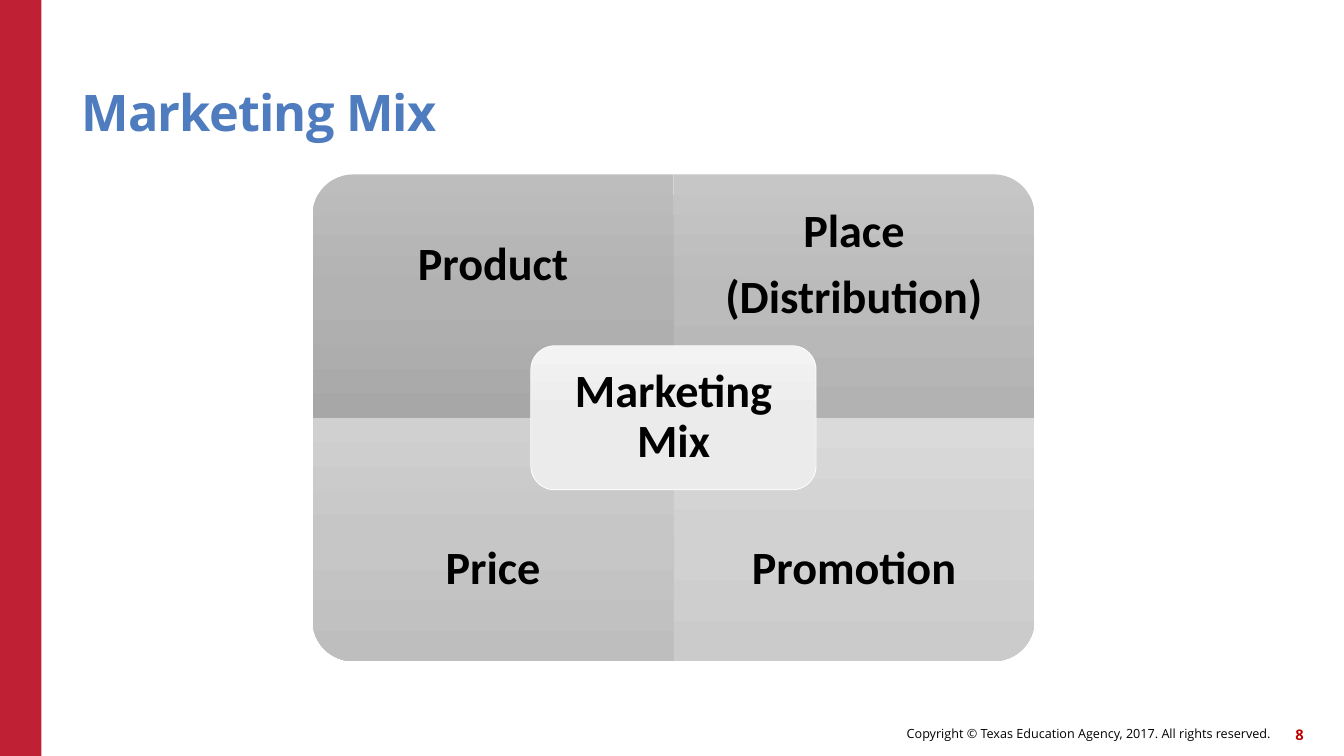
"""Build the Marketing Mix slide with its four-part matrix."""
from copy import deepcopy
from pptx import Presentation
from pptx.dml.color import RGBColor as RGB
from pptx.enum.shapes import MSO_SHAPE as Shape
from pptx.enum.text import MSO_ANCHOR as Anchor, PP_ALIGN as Align
from pptx.oxml.ns import qn
from pptx.util import Inches, Pt

COLORS = {
    "bar": "C02033", "title": "4E7CBE", "text": "000000",
    "page": "C00000", "edge": "FFFFFF",
}
SHADES = {
    "Product": ("BDBDBD", "B2B2B2", "A7A7A7"),
    "Place": ("C6C6C6", "BBBBBB", "B2B2B2"),
    "Price": ("D0D0D0", "C6C6C6", "BEBEBE"),
    "Promotion": ("DADADA", "D1D1D1", "CBCBCB"),
    "Center": ("F3F3F3", "EBEBEB", "E8E8E8"),
}
PARTS = [
    ("Product", ["Product"], 270), ("Place", ["Place", "(Distribution)"], 0),
    ("Price", ["Price"], 180), ("Promotion", ["Promotion"], 90),
]


def add_text(slide, box, lines, size, color, face="Open Sans", bold=False,
             align=Align.LEFT, anchor=Anchor.MIDDLE, inset=0, ratio=None):
    """Place lines of text in a box and return its paragraphs."""
    frame = slide.shapes.add_textbox(*map(Inches, box)).text_frame
    frame.word_wrap = True
    frame.vertical_anchor = anchor
    frame.margin_left = frame.margin_right = Inches(inset)
    frame.margin_top = frame.margin_bottom = Inches(inset)
    frame.text = "\n".join(lines)
    for para in frame.paragraphs:
        para.alignment = align
        para.line_spacing = ratio
        font = para.font
        font.name, font.size, font.bold = face, Pt(size), bold
        font.color.rgb = RGB.from_string(COLORS[color])
    for para in frame.paragraphs[:-1]:
        para.space_after = Pt(0.35 * size)
    return frame.paragraphs


def add_block(slide, kind, box, shades, turn=0):
    """Place a shape that shades from top to bottom, whatever its turn."""
    shape = slide.shapes.add_shape(kind, *map(Inches, box))
    shape.rotation = turn
    shape.shadow.inherit = False
    shape.line.fill.background()
    fill = shape.fill
    fill.gradient()
    fill.gradient_angle = 270
    grad = shape._element.spPr.find(qn("a:gradFill"))
    grad.set("rotWithShape", "0")
    first = grad.find(qn("a:gsLst"))[0]
    first.addnext(deepcopy(first))
    for stop, pos, shade in zip(fill.gradient_stops, (0, 0.5, 1), shades):
        stop.position = pos
        stop.color.rgb = RGB.from_string(shade)
    return shape


def add_label(slide, box, lines, inset):
    """Place a bold centred matrix label."""
    add_text(slide, box, lines, 33, "text", "Calibri", True, Align.CENTER,
             inset=inset, ratio=0.9)


def add_matrix(slide, left, top, width, height):
    """Place four quarters and the block at their centre."""
    wide, high = width / 2, height / 2
    for i, (name, lines, turn) in enumerate(PARTS):
        row, col = divmod(i, 2)
        x, y = left + col * wide, top + row * high
        w, h = (high, wide) if turn % 180 else (wide, high)
        box = (x + (wide - w) / 2, y + (high - h) / 2, w, h)
        add_block(slide, Shape.ROUND_1_RECTANGLE, box, SHADES[name], turn)
        tall = high * 0.75
        add_label(slide, (x, y + row * (high - tall), wide, tall), lines, 0.26)
    w, h, gap = 2.83, 1.43, 0.07
    x, y = left + wide - w / 2, top + high - h / 2
    center = add_block(slide, Shape.ROUNDED_RECTANGLE, (x, y, w, h),
                       SHADES["Center"])
    center.line.color.rgb = RGB.from_string(COLORS["edge"])
    center.line.width = Pt(0.5)
    add_label(slide, (x + gap, y + gap, w - 2 * gap, h - 2 * gap),
              ["Marketing Mix"], 0.14)


def add_frame(slide, width, height):
    """Place the side bar, title, copyright line and page number."""
    bar = slide.shapes.add_shape(Shape.RECTANGLE, 0, 0, Inches(0.41),
                                 Inches(height))
    bar.shadow.inherit = False
    bar.fill.solid()
    bar.fill.fore_color.rgb = RGB.from_string(COLORS["bar"])
    bar.line.fill.background()
    title = add_text(slide, (0.81, 0.45, 11, 0.96), ["Marketing Mix"], 36,
                     "title", bold=True, anchor=Anchor.BOTTOM, ratio=0.9)
    title[0].runs[0].font._element.set("spc", "-60")
    add_text(slide, (width - 7.19, height - 0.38, 6.46, 0.32),
             ["Copyright © Texas Education Agency, 2017. All rights reserved."],
             9, "text", align=Align.RIGHT)
    add_text(slide, (width - 0.82, height - 0.37, 0.42, 0.32), ["8"], 10.5,
             "page", bold=True, align=Align.RIGHT)


def main():
    """Build and save the slide."""
    deck = Presentation()
    width, height = 13.33, 7.5
    deck.slide_width, deck.slide_height = Inches(width), Inches(height)
    slide = deck.slides.add_slide(deck.slide_layouts[6])
    add_frame(slide, width, height)
    add_matrix(slide, 3.1, 1.73, 7.16, 4.83)
    deck.save("out.pptx")


if __name__ == "__main__":
    main()
